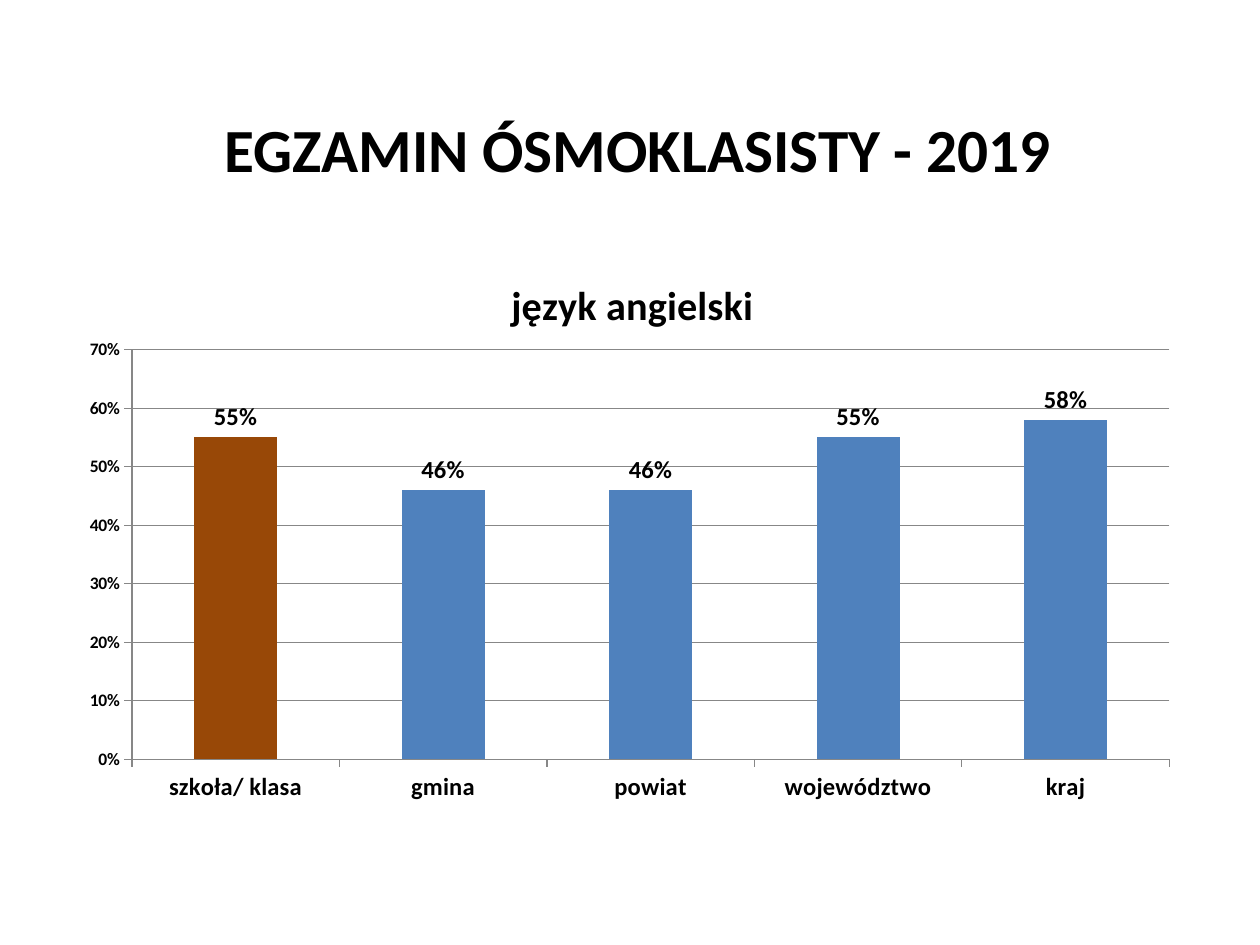
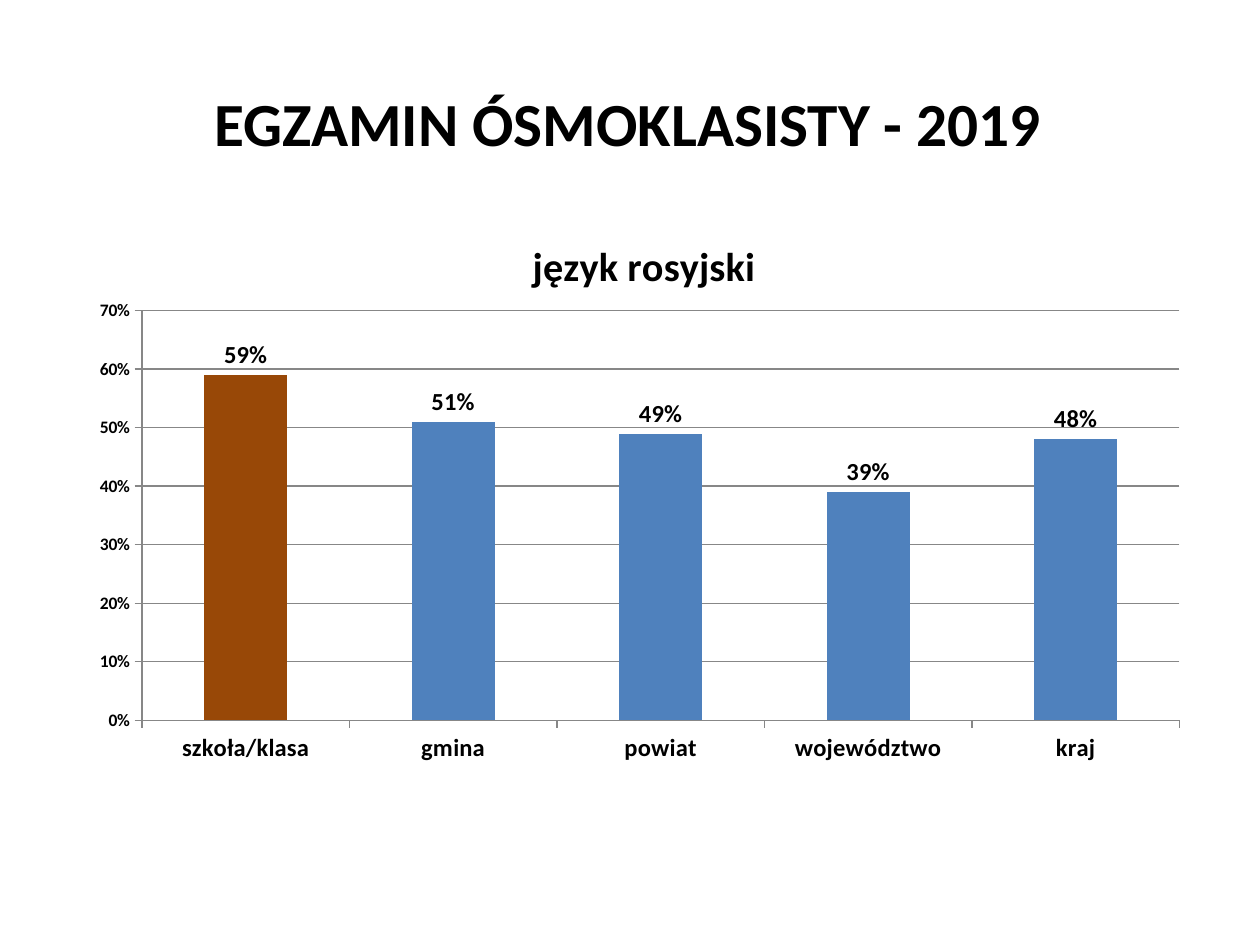
"""Builds two slides of exam results, each a title over a column chart."""
from lxml import etree
from pptx import Presentation
from pptx.chart.data import CategoryChartData
from pptx.dml.color import RGBColor
from pptx.enum.chart import XL_CHART_TYPE, XL_LABEL_POSITION, XL_TICK_MARK
from pptx.enum.text import MSO_ANCHOR, PP_ALIGN
from pptx.oxml.ns import qn
from pptx.util import Inches, Pt

TITLE = "EGZAMIN ÓSMOKLASISTY - 2019"
AREAS = ["gmina", "powiat", "województwo", "kraj"]
SLIDES = [
    dict(subject="język angielski", school="szkoła/ klasa",
         scores=[0.55, 0.46, 0.46, 0.55, 0.58],
         title_at=(0.59, 0.6, 8.95, 1.15), chart_at=(0.51, 1.86, 8.95, 4.58),
         subject_x=0.39),
    dict(subject="język rosyjski", school="szkoła/klasa",
         scores=[0.59, 0.51, 0.49, 0.39, 0.48],
         title_at=(0.51, 0.6, 8.95, 0.74), chart_at=(0.59, 1.55, 8.95, 4.58),
         subject_x=0.4),
]
COLORS = {k: RGBColor.from_string(v) for k, v in dict(
    text="000000", bar="4F81BD", school="984807", line="878787").items()}
FONT = "Calibri"
SUBJECT_Y = 0.06
PLOT = dict(x=0.06, y=0.2, w=0.92, h=0.71)


def style(font, size):
    font.name, font.size, font.bold = FONT, Pt(size), True
    font.color.rgb = COLORS["text"]


def place(parent, index, target=None, **shares):
    """Fix a chart part at shares of the chart's size."""
    for old in parent.findall(qn("c:layout")):
        parent.remove(old)
    layout = etree.Element(qn("c:layout"))
    manual = etree.SubElement(layout, qn("c:manualLayout"))
    modes = {"xMode": "edge", "yMode": "edge"}
    settings = {"layoutTarget": target} if target else {}
    for tag, value in {**settings, **modes, **shares}.items():
        etree.SubElement(manual, qn(f"c:{tag}")).set("val", str(value))
    parent.insert(index, layout)


def add_title(slide, at):
    sp = slide.shapes.title
    sp.left, sp.top, sp.width, sp.height = map(Inches, at)
    tf = sp.text_frame
    tf.text = TITLE
    tf.vertical_anchor = MSO_ANCHOR.MIDDLE
    p = tf.paragraphs[0]
    p.alignment = PP_ALIGN.CENTER
    style(p.font, 35)


def add_scores(slide, item):
    data = CategoryChartData(number_format="0%")
    data.categories = [item["school"], *AREAS]
    data.add_series("Series 1", item["scores"])
    chart = slide.shapes.add_chart(
        XL_CHART_TYPE.COLUMN_CLUSTERED, *map(Inches, item["chart_at"]), data).chart
    chart.has_legend = False
    style(chart.font, 10)

    title = chart.chart_title
    title.text_frame.text = item["subject"]
    style(title.text_frame.paragraphs[0].font, 23)
    title.include_in_layout = False
    place(title._element, 1, x=item["subject_x"], y=SUBJECT_Y)
    place(chart._chartSpace.chart.plotArea, 0, "inner", **PLOT)

    for axis, size in ((chart.category_axis, 14), (chart.value_axis, 10)):
        style(axis.tick_labels.font, size)
        axis.major_tick_mark = XL_TICK_MARK.OUTSIDE
        axis.minor_tick_mark = XL_TICK_MARK.NONE
        axis.format.line.color.rgb = COLORS["line"]
    values = chart.value_axis
    values.minimum_scale, values.maximum_scale, values.major_unit = 0, 0.7, 0.1
    values.tick_labels.number_format = "0%"
    values.tick_labels.number_format_is_linked = False
    values.major_gridlines.format.line.color.rgb = COLORS["line"]

    plot = chart.plots[0]
    plot.gap_width = 150
    plot.vary_by_categories = False
    series = plot.series[0]
    for part, color in ((series, "bar"), (series.points[0], "school")):
        part.format.fill.solid()
        part.format.fill.fore_color.rgb = COLORS[color]
    labels = series.data_labels
    labels.show_value = True
    labels.position = XL_LABEL_POSITION.OUTSIDE_END
    labels.number_format = "0%"
    labels.number_format_is_linked = False
    style(labels.font, 14)


def main():
    prs = Presentation()
    prs.slide_width, prs.slide_height = Inches(10), Inches(7.5)
    for item in SLIDES:
        slide = prs.slides.add_slide(prs.slide_layouts[5])
        add_title(slide, item["title_at"])
        add_scores(slide, item)
    prs.save("out.pptx")


if __name__ == "__main__":
    main()
